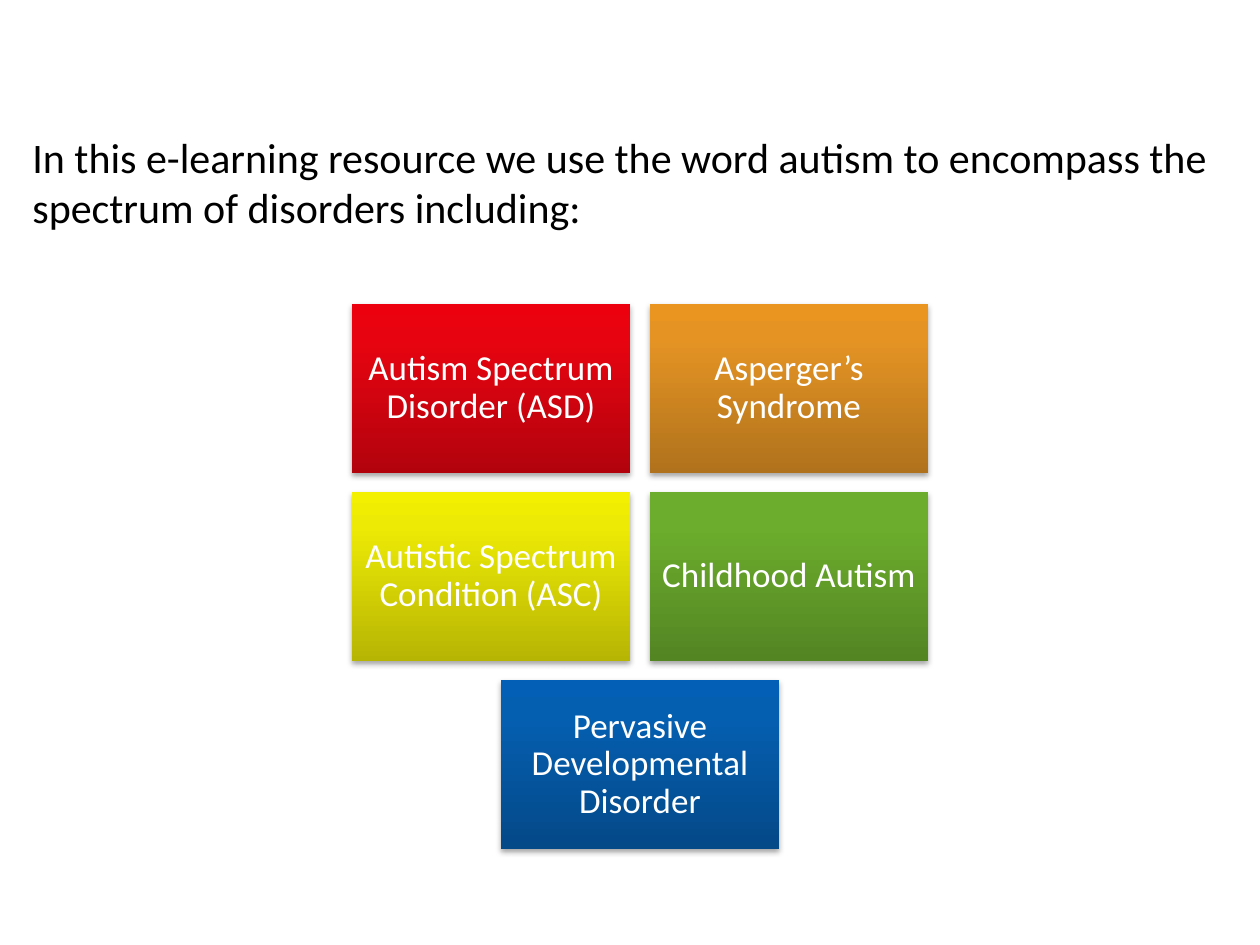
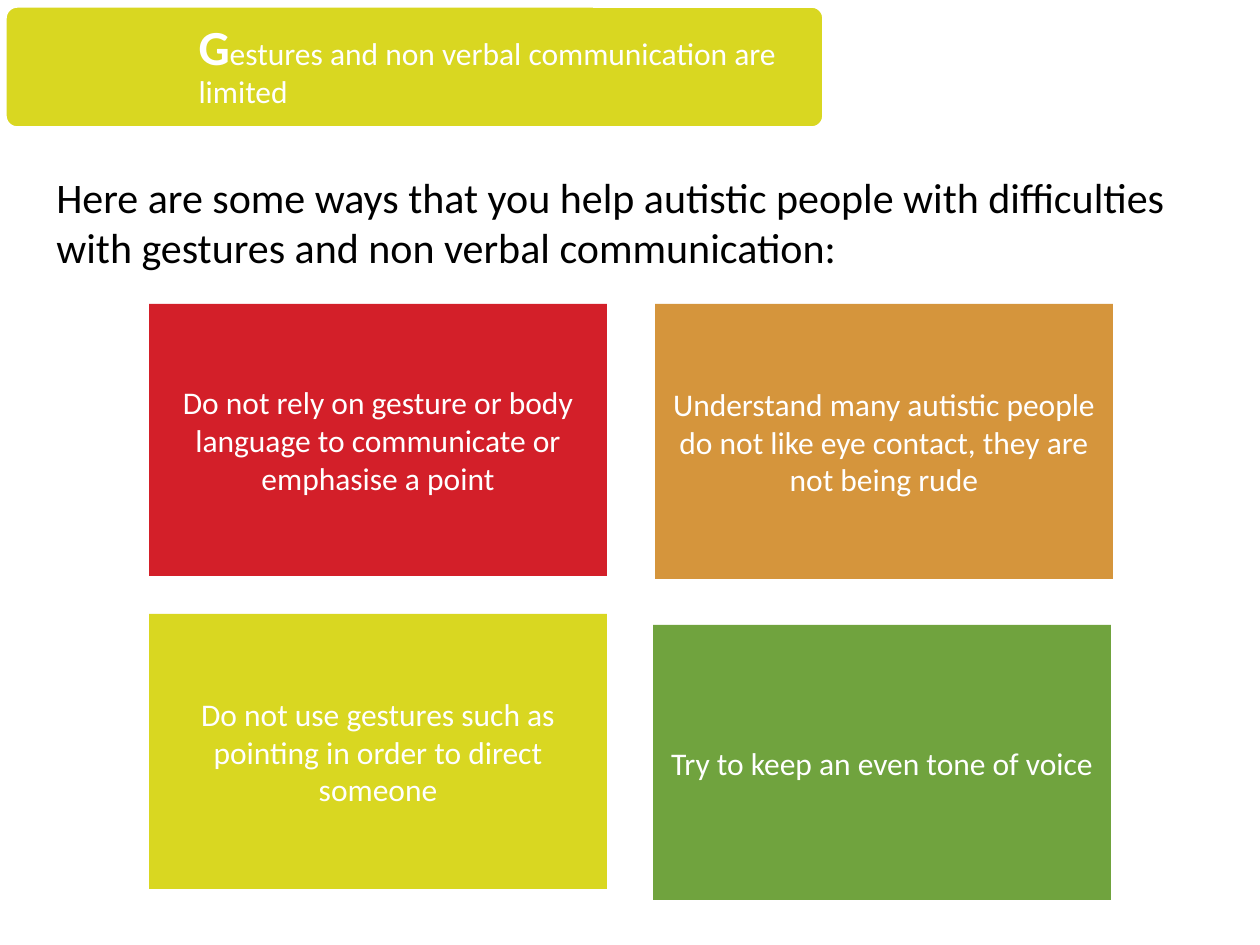
"""Build two slides on the autism spectrum and on non verbal communication."""
from pptx import Presentation
from pptx.dml.color import RGBColor
from pptx.enum.shapes import MSO_SHAPE
from pptx.enum.text import MSO_ANCHOR, PP_ALIGN
from pptx.oxml import parse_xml
from pptx.oxml.ns import nsdecls, qn
from pptx.util import Emu, Pt

BLACK = RGBColor(0x00, 0x00, 0x00)
WHITE = RGBColor(0xFF, 0xFF, 0xFF)
RED = RGBColor(0xD3, 0x1F, 0x29)
ORANGE = RGBColor(0xD5, 0x95, 0x3C)
YELLOW = RGBColor(0xD9, 0xD7, 0x21)
GREEN = RGBColor(0x70, 0xA3, 0x3E)

RED_RAMP = (RGBColor(0xB2, 0x03, 0x0D), RGBColor(0xE7, 0x04, 0x10), RGBColor(0xEC, 0x00, 0x0D))
ORANGE_RAMP = (RGBColor(0xB0, 0x72, 0x1C), RGBColor(0xE5, 0x94, 0x24), RGBColor(0xE9, 0x95, 0x20))
YELLOW_RAMP = (RGBColor(0xB7, 0xB5, 0x04), RGBColor(0xED, 0xEA, 0x05), RGBColor(0xF3, 0xF0, 0x01))
GREEN_RAMP = (RGBColor(0x53, 0x85, 0x23), RGBColor(0x6C, 0xAD, 0x2D), RGBColor(0x6D, 0xB0, 0x2B))
BLUE_RAMP = (RGBColor(0x04, 0x49, 0x88), RGBColor(0x05, 0x5F, 0xB1), RGBColor(0x02, 0x5F, 0xB5))

FONT = "Calibri"
PX_PER_INCH = 126


def px(n):
    return Emu(round(n * 914400 / PX_PER_INCH))


class Deck:
    def __init__(self):
        self.prs = Presentation()
        self.prs.slide_width = px(1260)
        self.prs.slide_height = px(945)
        self.s = None

    def slide(self):
        self.s = self.prs.slides.add_slide(self.prs.slide_layouts[6])

    def style(self, p, size, color, align=PP_ALIGN.LEFT, spacing=1.0):
        p.alignment = align
        p.line_spacing = spacing
        p.font.name = FONT
        p.font.size = Pt(size)
        p.font.color.rgb = color

    def margins(self, tf, left, top, right, bottom):
        tf.margin_left, tf.margin_top = px(left), px(top)
        tf.margin_right, tf.margin_bottom = px(right), px(bottom)

    def intro(self, x, y, w, text):
        tf = self.s.shapes.add_textbox(px(x), px(y), px(w), px(115)).text_frame
        tf.word_wrap = True
        p = tf.paragraphs[0]
        p.text = text
        self.style(p, 24, BLACK)

    def box(self, kind, x, y, w, h):
        sp = self.s.shapes.add_shape(kind, px(x), px(y), px(w), px(h))
        sp.shadow.inherit = False
        sp.line.fill.background()
        sp.text_frame.word_wrap = True
        sp.text_frame.vertical_anchor = MSO_ANCHOR.MIDDLE
        return sp

    def tile(self, x, y, w, h, text, size, spacing=1.0):
        sp = self.box(MSO_SHAPE.RECTANGLE, x, y, w, h)
        tf = sp.text_frame
        self.margins(tf, 9, 9, 9, 9)
        p = tf.paragraphs[0]
        p.text = text
        self.style(p, size, WHITE, PP_ALIGN.CENTER, spacing)
        return sp

    def flat_tile(self, x, y, w, h, text, color):
        sp = self.tile(x, y, w, h, text, 18)
        sp.fill.solid()
        sp.fill.fore_color.rgb = color

    def glossy_tile(self, x, y, w, h, text, ramp):
        sp = self.tile(x, y, w, h, text, 20, 0.9)
        stops = "".join(
            f'<a:gs pos="{pos}000"><a:srgbClr val="{color}"/></a:gs>'
            for pos, color in zip((0, 80, 100), ramp))
        sp_pr = sp._element.spPr
        sp_pr.find(qn("a:prstGeom")).addnext(parse_xml(
            f'<a:gradFill {nsdecls("a")} rotWithShape="1"><a:gsLst>{stops}</a:gsLst>'
            '<a:lin ang="16200000" scaled="0"/></a:gradFill>'))
        sp_pr.find(qn("a:effectLst")).append(parse_xml(
            f'<a:outerShdw {nsdecls("a")} blurRad="40000" dist="23000" dir="5400000" rotWithShape="0">'
            f'<a:srgbClr val="{BLACK}"><a:alpha val="35000"/></a:srgbClr></a:outerShdw>'))

    def banner(self, initial, rest):
        sp = self.box(MSO_SHAPE.ROUNDED_RECTANGLE, 5, 6, 819, 122)
        sp.adjustments[0] = 0.1
        sp.fill.solid()
        sp.fill.fore_color.rgb = YELLOW
        sp.line.color.rgb = WHITE
        sp.line.width = Pt(2)
        self.margins(sp.text_frame, 190, 12, 6, 12)
        p = sp.text_frame.paragraphs[0]
        self.style(p, 18, WHITE, spacing=0.9)
        r = p.add_run()
        r.text = initial
        r.font.size = Pt(28)
        r.font.bold = True
        p.add_run().text = rest


def spectrum_slide(deck):
    deck.slide()
    deck.intro(20, 125, 1205, "In this e-learning resource we use the word autism "
               "to encompass the spectrum of disorders including:")
    conditions = (
        (0, 0, "Autism Spectrum Disorder (ASD)", RED_RAMP),
        (1, 0, "Asperger’s Syndrome", ORANGE_RAMP),
        (0, 1, "Autistic Spectrum Condition (ASC)", YELLOW_RAMP),
        (1, 1, "Childhood Autism", GREEN_RAMP),
        (0.5, 2, "Pervasive Developmental Disorder", BLUE_RAMP),
    )
    for col, row, text, ramp in conditions:
        deck.glossy_tile(352 + 298 * col, 304 + 188 * row, 278, 169, text, ramp)


def gestures_slide(deck):
    deck.slide()
    tips = (
        (149, 304, 272, "Do not rely on gesture or body language to communicate or emphasise a point", RED),
        (655, 304, 275, "Understand many autistic people do not like eye contact, they are not being rude", ORANGE),
        (149, 614, 275, "Do not use gestures such as pointing in order to direct someone", YELLOW),
        (653, 625, 275, "Try to keep an even tone of voice", GREEN),
    )
    for x, y, h, text, color in tips:
        deck.flat_tile(x, y, 458, h, text, color)
    deck.intro(44, 165, 1171, "Here are some ways that you help autistic people with difficulties "
               "with gestures and non verbal communication:")
    deck.banner("G", "estures and non verbal communication are limited")


def main():
    deck = Deck()
    spectrum_slide(deck)
    gestures_slide(deck)
    deck.prs.save("out.pptx")


if __name__ == "__main__":
    main()
